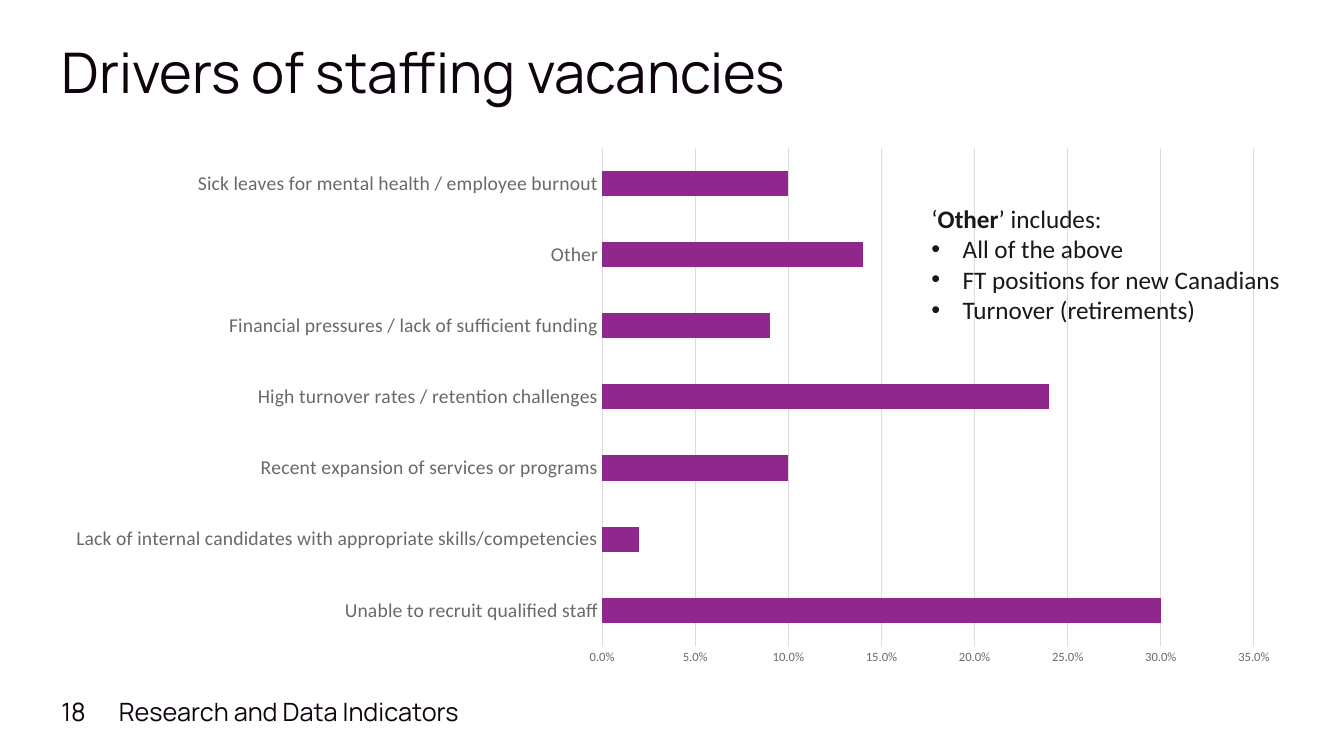
from dataclasses import dataclass

import pptx
import pptx.chart.data
import pptx.dml.color
import pptx.enum.chart
import pptx.enum.text
import pptx.util
from lxml import etree
from pptx.oxml import ns
from pptx.util import Inches

CHART = pptx.enum.chart
TEXT = pptx.enum.text


@dataclass(frozen=True)
class Theme:
    head: str = "Manrope"
    body: str = "Calibri"
    ink: str = "0E040E"
    dark: str = "181818"
    grey: str = "696969"
    rule: str = "DCDCDC"
    bar: str = "90278D"
    title: int = 40
    text: int = 18
    label: int = 14
    base: int = 10
    tick: int = 9
    line: float = 0.75


THEME = Theme()

DRIVERS = {
    "Unable to recruit qualified staff": 0.3,
    "Lack of internal candidates with appropriate skills/competencies": 0.02,
    "Recent expansion of services or programs": 0.1,
    "High turnover rates / retention challenges": 0.24,
    "Financial pressures / lack of sufficient funding": 0.09,
    "Other": 0.14,
    "Sick leaves for mental health / employee burnout": 0.1,
}


def apply(item, values):
    for name, value in values.items():
        setattr(item, name, value)


def rgb(code):
    return pptx.dml.color.RGBColor.from_string(code)


def style(font, face, size, color):
    apply(font, {"name": face, "size": pptx.util.Pt(size)})
    font.color.rgb = rgb(color)


def place(shape, left, top, width, height):
    apply(shape, {"left": Inches(left), "top": Inches(top),
                  "width": Inches(width), "height": Inches(height)})


def rule(line):
    line.color.rgb = rgb(THEME.rule)
    line.width = pptx.util.Pt(THEME.line)


def add_title(slide, text):
    title = slide.shapes.title
    place(title, 0.51, 0.4, 12.33, 0.61)
    frame = title.text_frame
    apply(frame, {"text": text, "word_wrap": True, "margin_top": Inches(0.05),
                  "vertical_anchor": TEXT.MSO_ANCHOR.TOP,
                  "auto_size": TEXT.MSO_AUTO_SIZE.NONE})
    para = frame.paragraphs[0]
    apply(para, {"alignment": TEXT.PP_ALIGN.LEFT, "line_spacing": 0.9})
    style(para.runs[0].font, THEME.head, THEME.title, THEME.ink)


def add_foot(slide, text, left, width):
    box = slide.shapes.add_textbox(Inches(left), Inches(6.86),
                                   Inches(width), Inches(0.4))
    frame = box.text_frame
    apply(frame, {"text": text, "word_wrap": True,
                  "vertical_anchor": TEXT.MSO_ANCHOR.MIDDLE})
    style(frame.paragraphs[0].runs[0].font, THEME.head, THEME.text, THEME.ink)


def add_bars(slide):
    data = pptx.chart.data.CategoryChartData(number_format="0.0%")
    data.categories = list(DRIVERS)
    data.add_series("Series 1", list(DRIVERS.values()))
    chart = slide.shapes.add_chart(
        CHART.XL_CHART_TYPE.BAR_CLUSTERED, Inches(0.51), Inches(1.36),
        Inches(12.33), Inches(5.34), data).chart
    apply(chart, {"has_legend": False, "has_title": False})
    style(chart.font, THEME.body, THEME.base, THEME.dark)

    plot = chart.plots[0]
    apply(plot, {"gap_width": 182, "vary_by_categories": False})
    fill = plot.series[0].format.fill
    fill.solid()
    fill.fore_color.rgb = rgb(THEME.bar)

    cats, vals = chart.category_axis, chart.value_axis
    for axis, size in ((cats, THEME.label), (vals, THEME.tick)):
        apply(axis, {"major_tick_mark": CHART.XL_TICK_MARK.NONE,
                     "minor_tick_mark": CHART.XL_TICK_MARK.NONE})
        style(axis.tick_labels.font, THEME.body, size, THEME.grey)
    rule(cats.format.line)
    apply(vals, {"minimum_scale": 0, "maximum_scale": 0.35,
                 "major_unit": 0.05, "has_major_gridlines": True})
    apply(vals.tick_labels, {"number_format": "0.0%",
                             "number_format_is_linked": False})
    vals.format.line.fill.background()
    rule(vals.major_gridlines.format.line)


def add_bullet(para):
    props = para._p.get_or_add_pPr()
    props.set("marL", str(Inches(0.31)))
    props.set("indent", str(-Inches(0.31)))
    face = etree.SubElement(props, ns.qn("a:buFont"))
    face.set("typeface", "Arial")
    mark = etree.SubElement(props, ns.qn("a:buChar"))
    mark.set("char", "•")


def add_note(slide, lead, items):
    """Add a lead line of (text, bold) runs with bullets below it."""
    box = slide.shapes.add_textbox(Inches(9.14), Inches(1.97),
                                   Inches(3.7), Inches(1.31))
    frame = box.text_frame
    apply(frame, {"word_wrap": False,
                  "auto_size": TEXT.MSO_AUTO_SIZE.SHAPE_TO_FIT_TEXT})
    for text, bold in lead:
        run = frame.paragraphs[0].add_run()
        run.text = text
        run.font.bold = bold
    for item in items:
        para = frame.add_paragraph()
        add_bullet(para)
        para.add_run().text = item
    for para in frame.paragraphs:
        for run in para.runs:
            style(run.font, THEME.body, THEME.text, THEME.dark)


def main():
    deck = pptx.Presentation()
    apply(deck, {"slide_width": Inches(13.33), "slide_height": Inches(7.5)})
    slide = deck.slides.add_slide(deck.slide_layouts[5])
    add_title(slide, "Drivers of staffing vacancies")
    add_foot(slide, "18", 0.51, 0.56)
    add_foot(slide, "Research and Data Indicators", 1.08, 3.67)
    add_bars(slide)
    add_note(slide,
             [("‘", False), ("Other", True), ("’ includes:", False)],
             ["All of the above", "FT positions for new Canadians",
              "Turnover (retirements)"])
    deck.save("out.pptx")


if __name__ == "__main__":
    main()
